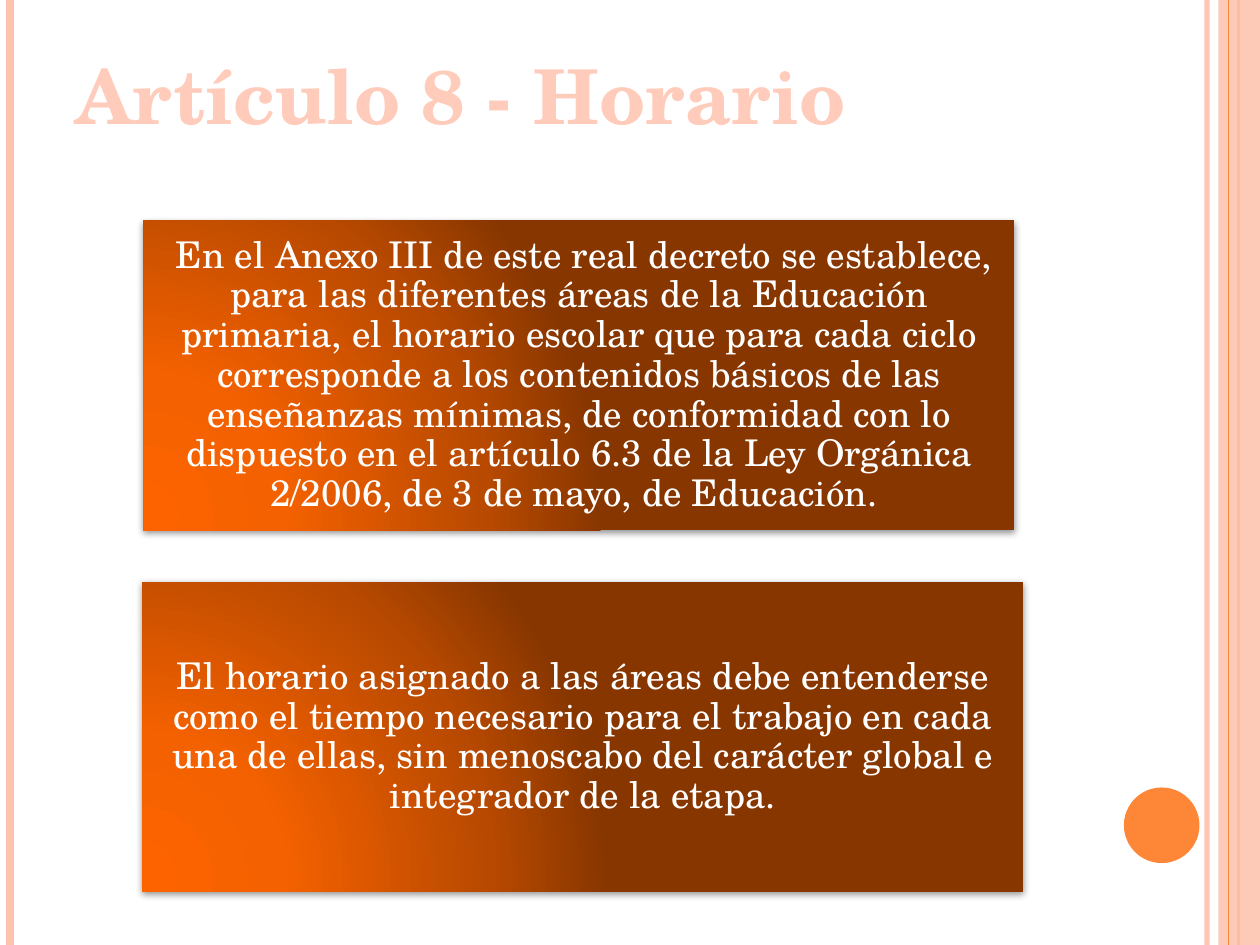
from lxml.etree import SubElement
from pptx import Presentation
from pptx.dml.color import RGBColor
from pptx.enum.shapes import MSO_CONNECTOR, MSO_SHAPE
from pptx.enum.text import MSO_ANCHOR, PP_ALIGN
from pptx.oxml import parse_xml
from pptx.oxml.ns import nsdecls, qn
from pptx.util import Inches, Pt

# Content
TITLE = "Artículo 8 - Horario"
PANELS = [  # text, left, width
    (" En el Anexo III de este real decreto se establece, para las diferentes "
     "áreas de la Educación primaria, el horario escolar que para cada ciclo "
     "corresponde a los contenidos básicos de las enseñanzas mínimas, de "
     "conformidad con lo dispuesto en el artículo 6.3 de la Ley Orgánica "
     "2/2006, de 3 de mayo, de Educación. ", 1.14, 6.91),
    ("El horario asignado a las áreas debe entenderse como el tiempo necesario "
     "para el trabajo en cada una de ellas, sin menoscabo del carácter global e "
     "integrador de la etapa.", 1.13, 6.99),
]

# Style and layout, in inches
FONT = "TeX Gyre Schola"
COLORS = {"peach": "FEC3AE", "orange": "FE8637", "title": "FFCCBB",
          "white": "FFFFFF", "shadow": "000000"}
GRADIENT = [(0, "FD6400"), (30, "F46100"), (75, "B74900"), (100, "873600")]
WIDTH, HEIGHT = 10, 7.5
PANEL_TOP, PANEL_HEIGHT, PANEL_STEP = 1.75, 2.46, 2.87
BACK_LINES = [  # x, colour, points, opacity
    (9.58, "peach", 3, 93), (0.08, "peach", 4.5, 100), (9.83, "orange", 1.5, 100)]
FRONT_LINES = [(9.75, "orange", 0.75, 100)]


def set_opacity(fill_parent, percent):
    color = next(fill_parent.iter(qn("a:srgbClr")))
    SubElement(color, qn("a:alpha"), val=str(percent * 1000))


def add_vertical_line(page, x, color, points, opacity):
    line = page.shapes.add_connector(
        MSO_CONNECTOR.STRAIGHT, Inches(x), 0, Inches(x), Inches(HEIGHT))
    line.line.color.rgb = RGBColor.from_string(COLORS[color])
    line.line.width = Pt(points)
    properties = line._element.spPr
    if opacity < 100:
        set_opacity(properties, opacity)
    SubElement(properties, qn("a:effectLst"))


def add_plain_shape(page, kind, left, top, width, height, color=None):
    shape = page.shapes.add_shape(
        kind, Inches(left), Inches(top), Inches(width), Inches(height))
    shape.shadow.inherit = False
    shape.line.fill.background()
    if color:
        shape.fill.solid()
        shape.fill.fore_color.rgb = RGBColor.from_string(COLORS[color])
    return shape


def write_text(box, text, *, size, color, anchor, align, bold=False,
               spacing=1.0, inset=0.09, bottom=0.09):
    frame = box.text_frame
    frame.word_wrap = True
    frame.vertical_anchor = anchor
    frame.margin_left = frame.margin_right = frame.margin_top = Inches(inset)
    frame.margin_bottom = Inches(bottom)
    para = frame.paragraphs[0]
    para.alignment = align
    para.line_spacing = spacing
    span = para.add_run()
    span.text = text
    span.font.name = FONT
    span.font.size = Pt(size)
    span.font.bold = bold
    span.font.color.rgb = RGBColor.from_string(COLORS[color])


def add_glow_and_shadow(shape):
    properties = shape._element.spPr
    stops = "".join(f'<a:gs pos="{share * 1000}"><a:srgbClr val="{color}"/></a:gs>'
                    for share, color in GRADIENT)
    gradient = parse_xml(
        f'<a:gradFill {nsdecls("a")} rotWithShape="1"><a:gsLst>{stops}</a:gsLst>'
        '<a:path path="circle"><a:fillToRect l="5000" t="100000" r="120000" '
        'b="10000"/></a:path></a:gradFill>')
    properties.find(qn("a:prstGeom")).addnext(gradient)
    shadow = parse_xml(
        f'<a:outerShdw {nsdecls("a")} blurRad="{Pt(4)}" dist="{Pt(1.6)}" '
        f'dir="5400000" rotWithShape="0"><a:srgbClr val="{COLORS["shadow"]}">'
        '<a:alpha val="42000"/></a:srgbClr></a:outerShdw>')
    properties.find(qn("a:effectLst")).append(shadow)


def main():
    deck = Presentation()
    deck.slide_width, deck.slide_height = Inches(WIDTH), Inches(HEIGHT)
    page = deck.slides.add_slide(deck.slide_layouts[6])

    # Side bands and dot
    for line in BACK_LINES:
        add_vertical_line(page, *line)
    band = add_plain_shape(page, MSO_SHAPE.RECTANGLE, 9.67, 0, 0.33, HEIGHT, "peach")
    set_opacity(band._element.spPr, 87)
    for line in FRONT_LINES:
        add_vertical_line(page, *line)
    add_plain_shape(page, MSO_SHAPE.OVAL, 8.92, 6.25, 0.6, 0.6, "orange")

    # Title
    title = page.shapes.add_textbox(Inches(0.5), Inches(0.3), Inches(8.17), Inches(1.25))
    write_text(title, TITLE, size=43.2, color="title", bold=True,
               anchor=MSO_ANCHOR.BOTTOM, align=PP_ALIGN.LEFT, inset=0.1, bottom=0.44)

    # Panels
    for row, (text, left, width) in enumerate(PANELS):
        panel = add_plain_shape(page, MSO_SHAPE.RECTANGLE, left,
                                PANEL_TOP + row * PANEL_STEP, width, PANEL_HEIGHT)
        add_glow_and_shadow(panel)
        write_text(panel, text, size=21, color="white", spacing=0.9,
                   anchor=MSO_ANCHOR.MIDDLE, align=PP_ALIGN.CENTER)

    deck.save("out.pptx")


if __name__ == "__main__":
    main()
